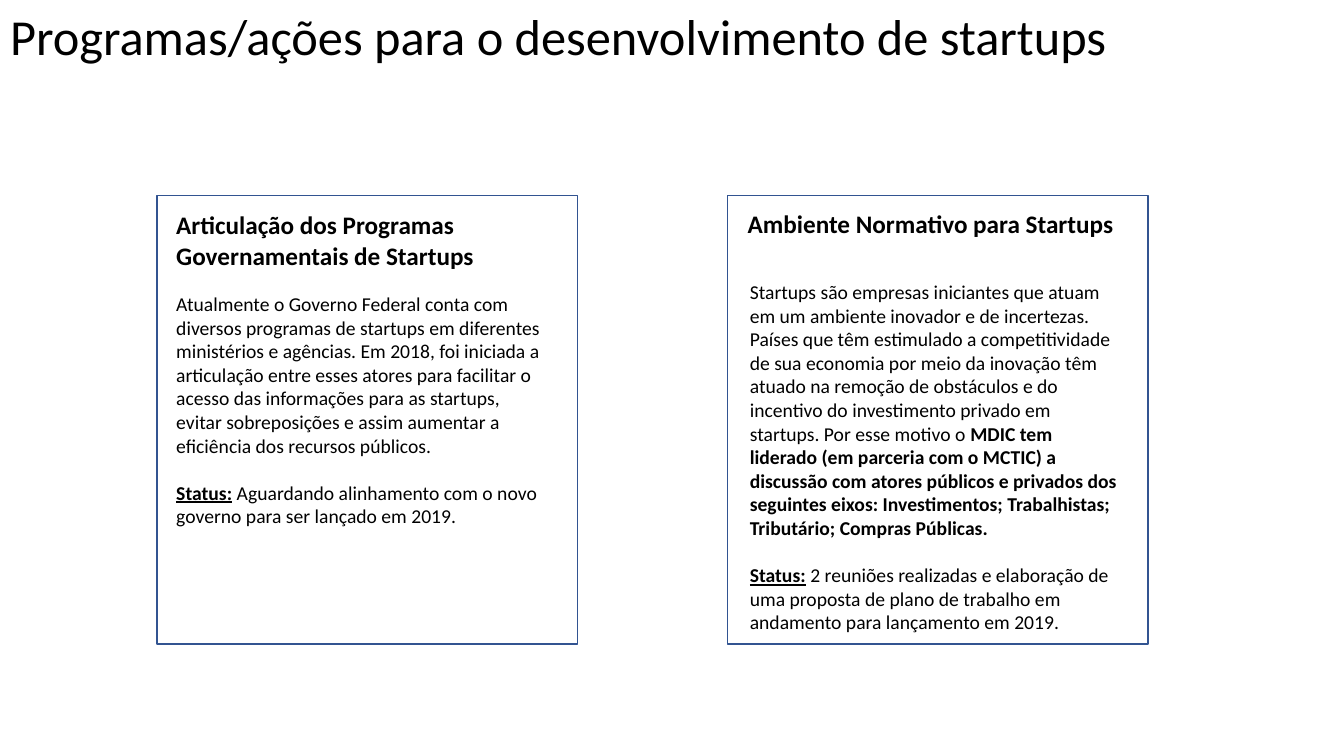
from dataclasses import dataclass

from pptx import Presentation
from pptx.dml.color import RGBColor
from pptx.enum.shapes import MSO_SHAPE
from pptx.enum.text import MSO_ANCHOR, MSO_AUTO_SIZE, PP_ALIGN
from pptx.slide import Slide
from pptx.text.text import TextFrame
from pptx.util import Pt

BLACK = RGBColor(0x00, 0x00, 0x00)
FRAME_BLUE = RGBColor(0x32, 0x54, 0x91)
FONT = "Calibri"

CARD_TOP, CARD_WIDTH, CARD_HEIGHT = 139.7, 300.2, 320.4
TEXT_WIDTH = 279.4
BODY_SIZE = 14
PARAGRAPH_GAP = 17


@dataclass(frozen=True)
class Span:
    text: str
    bold: bool = False
    underline: bool = False


@dataclass(frozen=True)
class TextBlock:
    left: float
    top: float
    height: float
    size: float
    paragraphs: list[list[Span]]


@dataclass(frozen=True)
class Card:
    left: float
    heading: TextBlock
    body: TextBlock


STATUS = Span("Status:", bold=True, underline=True)

CARDS = [
    Card(
        left=112.3,
        heading=TextBlock(118.8, 146.2, 51, 18, [
            [Span("Articulação dos Programas Governamentais de Startups", bold=True)],
        ]),
        body=TextBlock(118.8, 205.2, 177, BODY_SIZE, [
            [Span("Atualmente o Governo Federal conta com diversos programas de startups "
                  "em diferentes ministérios e agências. Em 2018, foi iniciada a "
                  "articulação entre esses atores para facilitar o acesso das "
                  "informações para as startups, evitar sobreposições e assim aumentar "
                  "a eficiência dos recursos públicos.")],
            [STATUS, Span(" Aguardando alinhamento com o novo governo para ser lançado "
                          "em 2019.")],
        ]),
    ),
    Card(
        left=519.8,
        heading=TextBlock(527, 145, 29, 18, [
            [Span("Ambiente Normativo para Startups", bold=True)],
        ]),
        body=TextBlock(528.5, 196.6, 262, BODY_SIZE, [
            [Span("Startups são empresas iniciantes que atuam em um ambiente inovador e "
                  "de incertezas. Países que têm estimulado a competitividade de sua "
                  "economia por meio da inovação têm atuado na remoção de obstáculos e "
                  "do incentivo do investimento privado em startups. Por esse motivo o "),
             Span("MDIC tem liderado (em parceria com o MCTIC) a discussão com atores "
                  "públicos e privados dos seguintes eixos: Investimentos; Trabalhistas; "
                  "Tributário; Compras Públicas.", bold=True)],
            [STATUS, Span(" 2 reuniões realizadas e elaboração de uma proposta de plano "
                          "de trabalho em andamento para lançamento em 2019.")],
        ]),
    ),
]


def write_paragraphs(frame: TextFrame, paragraphs: list[list[Span]], size: float) -> None:
    frame.word_wrap = True
    frame.auto_size = MSO_AUTO_SIZE.NONE
    frame.vertical_anchor = MSO_ANCHOR.TOP
    for index, spans in enumerate(paragraphs):
        para = frame.add_paragraph() if index else frame.paragraphs[0]
        para.alignment = PP_ALIGN.LEFT
        if index:
            para.space_before = Pt(PARAGRAPH_GAP)
        for span in spans:
            run = para.add_run()
            run.text = span.text
            run.font.name = FONT
            run.font.size = Pt(size)
            run.font.bold = span.bold
            run.font.underline = span.underline
            run.font.color.rgb = BLACK


def add_title(slide: Slide, text: str) -> None:
    title = slide.shapes.title
    title.left, title.top, title.width, title.height = Pt(0), Pt(0), Pt(960), Pt(51)
    write_paragraphs(title.text_frame, [[Span(text)]], 36)


def add_frame(slide: Slide, left: float) -> None:
    frame = slide.shapes.add_shape(MSO_SHAPE.RECTANGLE, Pt(left), Pt(CARD_TOP),
                                   Pt(CARD_WIDTH), Pt(CARD_HEIGHT))
    frame.shadow.inherit = False
    frame.fill.background()
    frame.line.color.rgb = FRAME_BLUE
    frame.line.width = Pt(1)


def add_text_block(slide: Slide, block: TextBlock) -> None:
    box = slide.shapes.add_textbox(Pt(block.left), Pt(block.top),
                                   Pt(TEXT_WIDTH), Pt(block.height))
    write_paragraphs(box.text_frame, block.paragraphs, block.size)


def main() -> None:
    deck = Presentation()
    deck.slide_width, deck.slide_height = Pt(960), Pt(540)
    slide = deck.slides.add_slide(deck.slide_layouts.get_by_name("Title Only"))

    # Title
    add_title(slide, "Programas/ações para o desenvolvimento de startups")

    # Framed cards with heading and body
    for card in CARDS:
        add_frame(slide, card.left)
        add_text_block(slide, card.heading)
        add_text_block(slide, card.body)

    deck.save("out.pptx")


if __name__ == "__main__":
    main()
